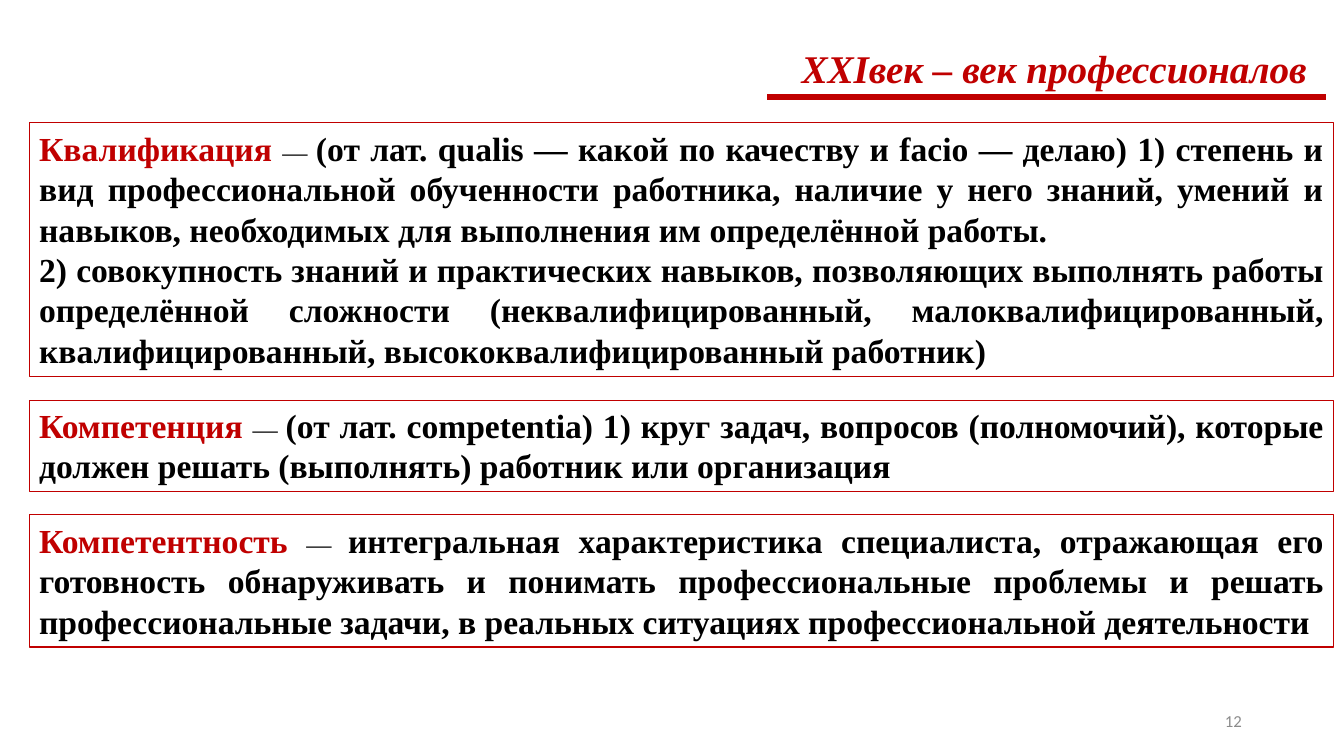
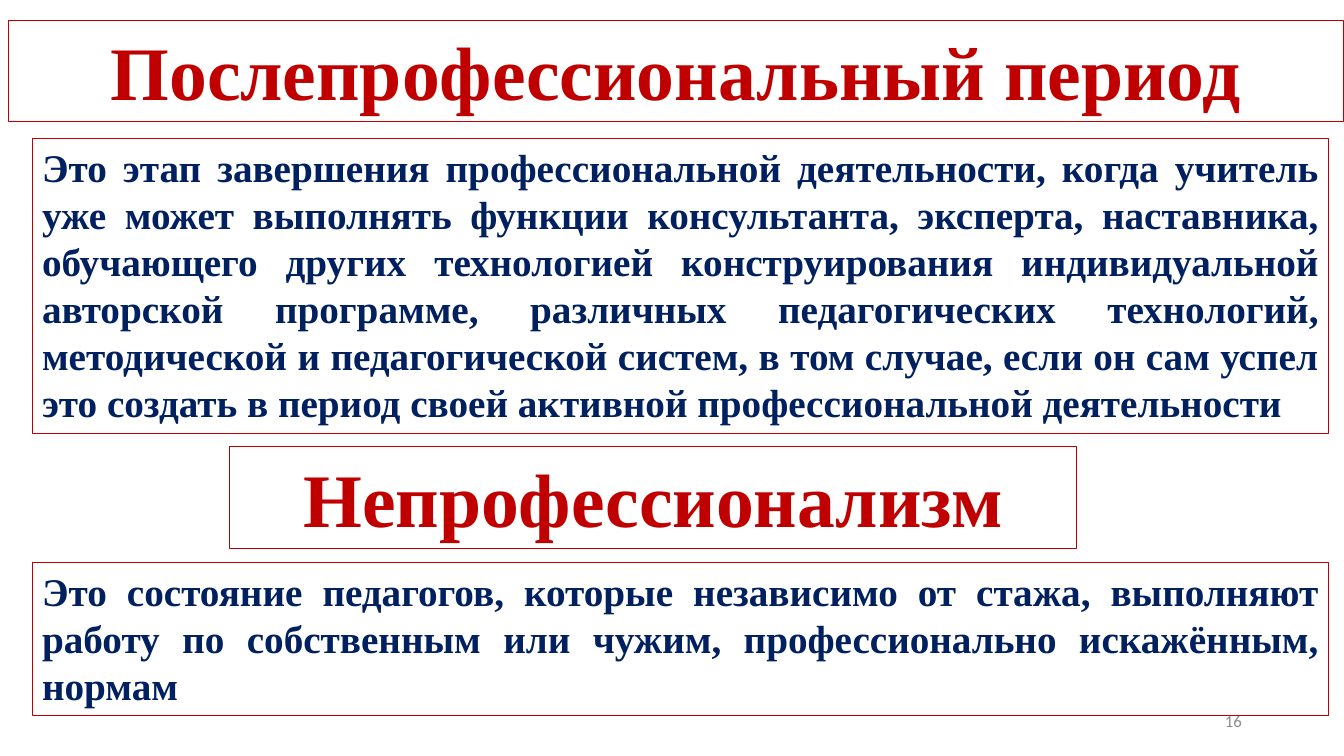
from lxml import etree
from pptx import Presentation
from pptx import util as u
from pptx.dml import color
from pptx.enum import shapes, text
from pptx.oxml import ns

RED, NAVY, BLACK, GREY = "C00000", "002060", "000000", "8C8C8C"
SERIF = "Times New Roman"
TERM = {"name": SERIF, "size": u.Pt(24), "bold": True, "color": RED}
DASH = {"name": SERIF, "size": u.Pt(18), "bold": False, "color": BLACK}
DEFINITION = {**TERM, "color": BLACK}
HEADING = {**TERM, "size": u.Pt(54)}
BODY = {**TERM, "size": u.Pt(28), "color": NAVY}
TITLE = {**TERM, "size": u.Pt(28), "italic": True}
NUMBER = {"name": "Calibri", "size": u.Pt(12), "color": GREY}
RIGHT = text.PP_ALIGN.RIGHT
CENTER, JUSTIFY = text.PP_ALIGN.CENTER, text.PP_ALIGN.JUSTIFY
TOP, MIDDLE = text.MSO_ANCHOR.TOP, text.MSO_ANCHOR.MIDDLE


def rgb(code):
    return color.RGBColor.from_string(code)


class Deck:
    def __init__(self):
        self.file = Presentation()
        self.file.slide_width, self.file.slide_height = u.Pt(960), u.Pt(540)
        self.slide = None

    def new_slide(self, number):
        self.slide = self.file.slides.add_slide(self.file.slide_layouts[6])
        self.label(678.2, 500.4, 216, 28.8, str(number), NUMBER, MIDDLE)

    def fill_text(self, frame, paragraphs, align, anchor):
        frame.word_wrap = True
        frame.vertical_anchor = anchor
        for index, pieces in enumerate(paragraphs):
            paragraph = frame.add_paragraph() if index else frame.paragraphs[0]
            paragraph.alignment = align
            for words, style in pieces:
                run = paragraph.add_run()
                run.text = words
                for key, value in style.items():
                    if key == "color":
                        run.font.color.rgb = rgb(value)
                    else:
                        setattr(run.font, key, value)

    def label(self, left, top, width, height, words, style, anchor=TOP):
        label = self.slide.shapes.add_textbox(
            u.Pt(left), u.Pt(top), u.Pt(width), u.Pt(height))
        self.fill_text(label.text_frame, [[(words, style)]], RIGHT, anchor)

    def frame(self, left, top, width, height, paragraphs, align=JUSTIFY):
        frame = self.slide.shapes.add_shape(
            shapes.MSO_SHAPE.RECTANGLE,
            u.Pt(left), u.Pt(top), u.Pt(width), u.Pt(height))
        frame.shadow.inherit = False
        frame.fill.background()
        frame.line.color.rgb = rgb(RED)
        frame.line.width = u.Pt(0.75)
        self.fill_text(frame.text_frame, paragraphs, align, TOP)

    def rule(self, left, right, y):
        rule = self.slide.shapes.add_connector(
            shapes.MSO_CONNECTOR.STRAIGHT,
            u.Pt(left), u.Pt(y), u.Pt(right), u.Pt(y))
        rule.line.color.rgb = rgb(RED)
        rule.line.width = u.Pt(4.5)
        etree.SubElement(rule._element.spPr, ns.qn("a:effectLst"))


DEFINITIONS = [
    ("Квалификация", 6, [
        "(от лат. qualis — какой по качеству и facio — делаю) 1) степень и вид "
        "профессиональной обученности работника, наличие у него знаний, умений "
        "и навыков, необходимых для выполнения им определённой работы.",
        "2) совокупность знаний и практических навыков, позволяющих выполнять "
        "работы определённой сложности (неквалифицированный, "
        "малоквалифицированный, квалифицированный, высококвалифицированный "
        "работник)"]),
    ("Компетенция", 2, [
        "(от лат. соmpetentia) 1) круг задач, вопросов (полномочий), которые "
        "должен решать (выполнять) работник или организация"]),
    ("Компетентность", 3, [
        "интегральная характеристика специалиста, отражающая его готовность "
        "обнаруживать и понимать профессиональные проблемы и решать "
        "профессиональные задачи, в реальных ситуациях профессиональной "
        "деятельности"]),
]

STAGES = [
    ("Послепрофессиональный период", 5.8, 954, 14.4, 98.6, 6,
     "Это этап завершения профессиональной деятельности, когда учитель уже "
     "может выполнять функции консультанта, эксперта, наставника, обучающего "
     "других технологией конструирования индивидуальной авторской программе, "
     "различных педагогических технологий, методической и педагогической "
     "систем, в том случае, если он сам успел это создать в период своей "
     "активной профессиональной деятельности"),
    ("Непрофессионализм", 164.2, 604.8, 319, 401.8, 3,
     "Это состояние педагогов, которые независимо от стажа, выполняют работу "
     "по собственным или чужим, профессионально искажённым, нормам"),
]


def definitions_slide(deck):
    deck.new_slide(12)
    deck.label(308.2, 28.1, 632.2, 41, "ХХIвек – век профессионалов", TITLE)
    deck.rule(547.9, 946.8, 69.1)
    top, gap = 87.8, 16.6
    for term, lines, (meaning, *others) in DEFINITIONS:
        height = lines * 29 + 7.4
        opening = [(term + " ", TERM), ("— ", DASH), (meaning, DEFINITION)]
        rest = [[(other, DEFINITION)] for other in others]
        deck.frame(20.9, top, 931.7, height, [opening] + rest)
        top += height + gap


def stages_slide(deck):
    deck.new_slide(16)
    for heading, left, width, heading_top, body_top, lines, body in STAGES:
        deck.frame(left, heading_top, width, 72.7, [[(heading, HEADING)]], CENTER)
        deck.frame(23, body_top, 925.9, lines * 34 + 7.2, [[(body, BODY)]])


def main():
    deck = Deck()
    definitions_slide(deck)
    stages_slide(deck)
    deck.file.save("out.pptx")


if __name__ == "__main__":
    main()
